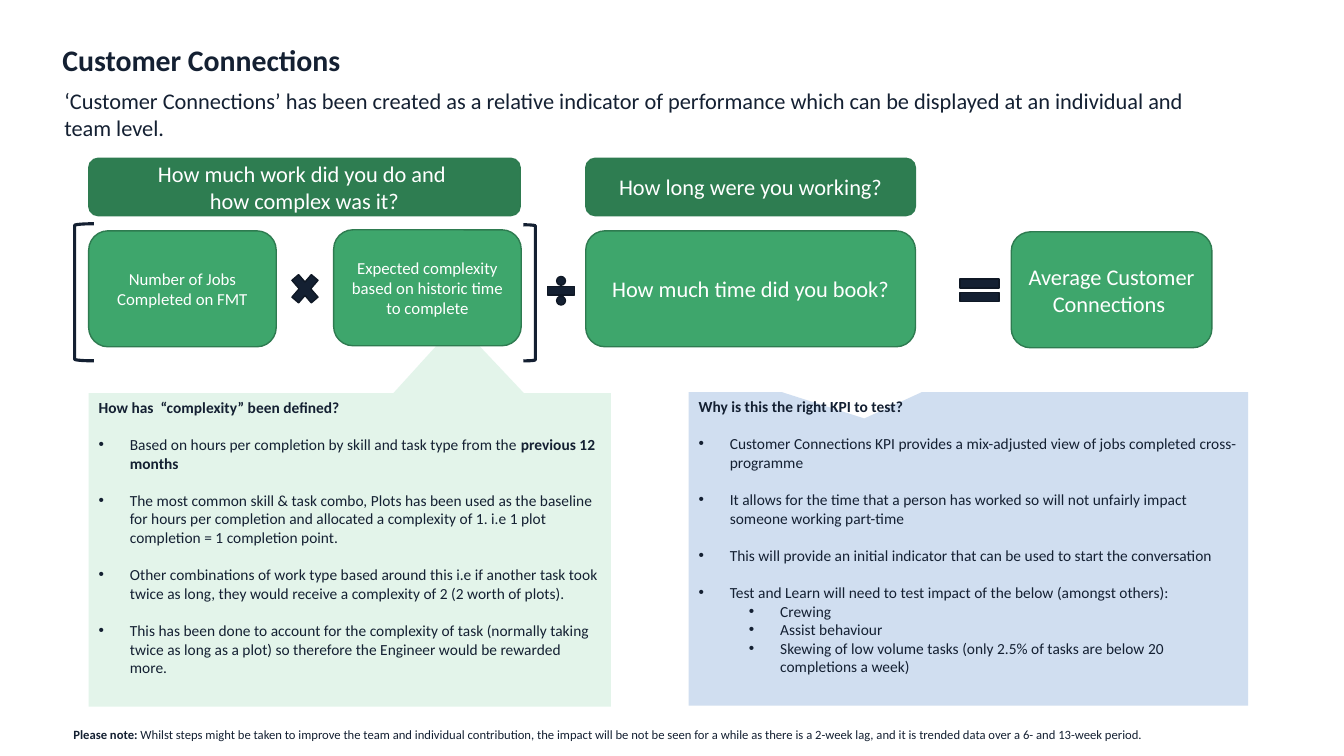
from dataclasses import dataclass

from lxml.etree import SubElement
from pptx import Presentation
from pptx.dml.color import RGBColor
from pptx.enum.shapes import MSO_SHAPE
from pptx.enum.text import MSO_ANCHOR, PP_ALIGN
from pptx.oxml.ns import qn
from pptx.util import Pt

PX = 9144


@dataclass(frozen=True)
class Theme:
    font: str = "Calibri"
    ink: str = "142032"
    ink_edge: str = "0F1825"
    white: str = "FFFFFF"
    green: str = "3EA66C"
    dark_green: str = "2E7D51"
    green_edge: str = "2E7B50"
    pale_green: str = "D6F0E1"
    pale_blue: str = "BBCFE9"
    title: float = 21.3
    lead: int = 16
    label: int = 12
    body: int = 11
    note: int = 9
    body_gap: float = 13.4
    panel_opacity: int = 68000


def apply(target, values):
    for name, value in values.items():
        setattr(target, name, value)


class SlideBuilder:
    def __init__(self, deck, theme):
        self.theme = theme
        self.page = deck.slides.add_slide(deck.slide_layouts[6])

    def add_spans(self, para, text, size, color):
        for index, part in enumerate(text.split("**")):
            if part:
                span = para.add_run()
                span.text = part
                apply(span.font, {"name": self.theme.font, "size": Pt(size), "bold": index % 2 == 1})
                span.font.color.rgb = RGBColor.from_string(color)

    def paragraphs(self, frame, lines):
        for index, line in enumerate(lines):
            yield (frame.add_paragraph() if index else frame.paragraphs[0]), line

    def shape(self, kind, area, fill=None, edge=None, weight=1):
        box = self.page.shapes.add_shape(kind, *(value * PX for value in area))
        box.shadow.inherit = False
        if fill:
            box.fill.solid()
            box.fill.fore_color.rgb = RGBColor.from_string(fill)
        else:
            box.fill.background()
        if edge:
            box.line.color.rgb = RGBColor.from_string(edge)
            box.line.width = Pt(weight)
        else:
            box.line.fill.background()
        return box

    def card(self, area, fill, size, *lines):
        box = self.shape(MSO_SHAPE.ROUNDED_RECTANGLE, area, fill, self.theme.green_edge)
        apply(box.text_frame, {"word_wrap": True, "vertical_anchor": MSO_ANCHOR.MIDDLE})
        for para, line in self.paragraphs(box.text_frame, lines):
            para.alignment = PP_ALIGN.CENTER
            self.add_spans(para, line, size, self.theme.white)

    def operator(self, kind, area):
        self.shape(kind, area, self.theme.ink, self.theme.ink_edge)

    def bracket(self, area, rotation=0):
        box = self.shape(MSO_SHAPE.LEFT_BRACKET, area, None, self.theme.ink, 2.25)
        box.rotation = rotation

    def text(self, area, text, size, anchor=MSO_ANCHOR.TOP, spacing=None):
        box = self.page.shapes.add_textbox(*(value * PX for value in area))
        apply(box.text_frame, {"word_wrap": True, "vertical_anchor": anchor})
        para = box.text_frame.paragraphs[0]
        para.line_spacing = spacing
        self.add_spans(para, text, size, self.theme.ink)

    def bullet(self, para, level):
        props = para._p.get_or_add_pPr()
        apply(para, {"level": level, "space_before": Pt(0 if level else self.theme.body_gap)})
        props.set("marL", str((81 if level else 31) * PX))
        props.set("indent", str(-31 * PX))
        SubElement(props, qn("a:buFont")).set("typeface", "Arial")
        SubElement(props, qn("a:buChar")).set("char", "•")

    def callout(self, area, fill, pointer, heading, points):
        box = self.shape(MSO_SHAPE.RECTANGULAR_CALLOUT, area, fill)
        for index, value in enumerate(pointer):
            box.adjustments[index] = value
        color = next(box._element.spPr.iter(qn("a:srgbClr")))
        SubElement(color, qn("a:alpha")).set("val", str(self.theme.panel_opacity))
        apply(box.text_frame, {"word_wrap": True, "vertical_anchor": MSO_ANCHOR.TOP})
        lines = [(None, f"**{heading}**"), *points]
        for para, (level, line) in self.paragraphs(box.text_frame, lines):
            para.alignment = PP_ALIGN.LEFT
            if level is not None:
                self.bullet(para, level)
            self.add_spans(para, line, self.theme.body, self.theme.ink)


COMPLEXITY = [
    (0, "Based on hours per completion by skill and task type from the **previous 12 months**"),
    (0, "The most common skill & task combo, Plots has been used as the baseline for hours per "
        "completion and allocated a complexity of 1. i.e 1 plot completion = 1 completion point."),
    (0, "Other combinations of work type based around this i.e if another task took twice as long, "
        "they would receive a complexity of 2 (2 worth of plots)."),
    (0, "This has been done to account for the complexity of task (normally taking twice as long "
        "as a plot) so therefore the Engineer would be rewarded more."),
]
RIGHT_KPI = [
    (0, "Customer Connections KPI provides a mix-adjusted view of jobs completed cross-programme"),
    (0, "It allows for the time that a person has worked so will not unfairly impact someone "
        "working part-time"),
    (0, "This will provide an initial indicator that can be used to start the conversation"),
    (0, "Test and Learn will need to test impact of the below (amongst others):"),
    (1, "Crewing"),
    (1, "Assist behaviour"),
    (1, "Skewing of low volume tasks (only 2.5% of tasks are below 20 completions a week)"),
]


def main():
    deck = Presentation()
    apply(deck, {"slide_width": 1333 * PX, "slide_height": 750 * PX})
    theme = Theme()
    page = SlideBuilder(deck, theme)

    page.text((52, 49, 945, 33), "**Customer Connections**", theme.title, MSO_ANCHOR.BOTTOM, 0.9)
    page.text((54, 82, 1173, 64),
              "‘Customer Connections’ has been created as a relative indicator of performance "
              "which can be displayed at an individual and team level.", theme.lead)

    page.callout((88, 390, 518, 311), theme.pale_green, (0.206, -0.725),
                 "How has  “complexity” been defined?", COMPLEXITY)
    page.callout((683, 389, 555, 311), theme.pale_blue, (-0.186, -0.416),
                 "Why is this the right KPI to test?", RIGHT_KPI)

    page.card((88, 157, 428, 57), theme.dark_green, theme.lead,
              "How much work did you do and ", "how complex was it?")
    page.card((581, 157, 327, 57), theme.dark_green, theme.lead, "How long were you working?")
    page.card((88, 229, 186, 115), theme.green, theme.label, "Number of Jobs Completed on FMT")
    page.card((331, 228, 186, 115), theme.green, theme.label,
              "Expected complexity based on historic time to complete")
    page.card((581, 229, 327, 115), theme.green, theme.lead, "How much time did you book?")
    page.card((1003, 230, 199, 115), theme.green, theme.lead, "Average Customer Connections ")

    page.operator(MSO_SHAPE.MATH_MULTIPLY, (284, 265, 37, 43))
    page.operator(MSO_SHAPE.MATH_DIVIDE, (538, 270, 37, 37))
    page.operator(MSO_SHAPE.MATH_EQUAL, (945, 269, 53, 38))
    page.bracket((74, 222, 19, 136))
    page.bracket((519, 223, 12, 135), 180)

    page.text((63, 716, 1219, 25),
              "**Please note: **Whilst steps might be taken to improve the team and individual "
              "contribution, the impact will be not be seen for a while as there is a 2-week lag, "
              "and it is trended data over a 6- and 13-week period.", theme.note)
    deck.save("out.pptx")


if __name__ == "__main__":
    main()
